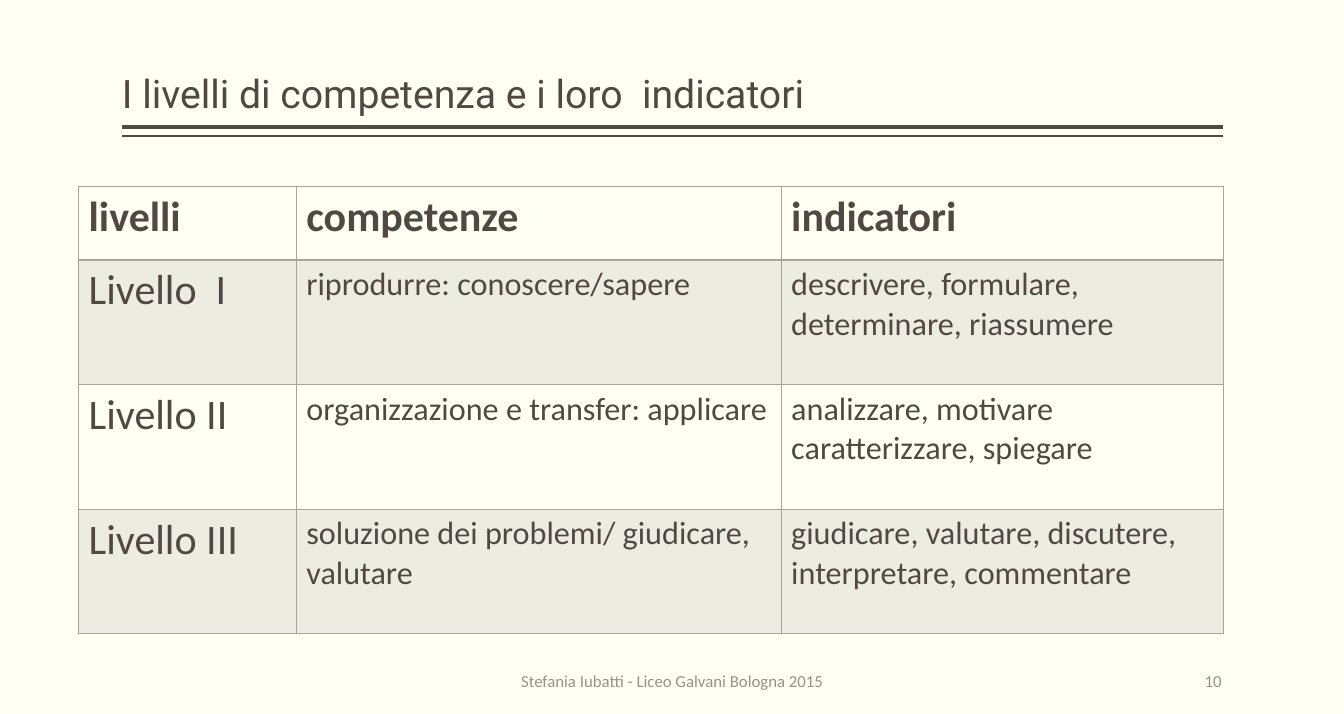
from dataclasses import dataclass
from lxml import etree
from pptx import Presentation
from pptx.dml.color import RGBColor
from pptx.enum.shapes import MSO_CONNECTOR
from pptx.enum.text import MSO_ANCHOR, PP_ALIGN
from pptx.oxml.ns import qn
from pptx.util import Inches, Pt

STRAIGHT = MSO_CONNECTOR.STRAIGHT
BOTTOM, MIDDLE = MSO_ANCHOR.BOTTOM, MSO_ANCHOR.MIDDLE
LEFT, CENTER, RIGHT = PP_ALIGN.LEFT, PP_ALIGN.CENTER, PP_ALIGN.RIGHT

CREAM = RGBColor(0xFF, 0xFF, 0xF3)
BROWN = RGBColor(0x51, 0x48, 0x43)
TAUPE = RGBColor(0x9D, 0x8F, 0x88)
GREY = RGBColor(0xA8, 0xA3, 0x9E)
BAND_ALPHA = "20000"

PAGE_WIDTH = 40 / 3
PAGE_HEIGHT = 18 / 2.54


@dataclass
class Label:
    text: str
    left: float
    top: float
    width: float
    height: float
    size: int
    font: str
    color: RGBColor
    anchor: MSO_ANCHOR
    align: PP_ALIGN
    line_spacing: float = 1.0


@dataclass
class Rule:
    top: float
    weight: float


LABELS = [
    Label("I livelli di competenza e i loro  indicatori", 1.21, 0.48, 10.92, 0.73,
          28, "Roboto", BROWN, BOTTOM, LEFT, 0.9),
    Label("10", 10.12, 6.57, 2, 0.38, 12, "Calibri", TAUPE, MIDDLE, RIGHT),
    Label("Stefania Iubatti - Liceo Galvani Bologna 2015", 3.21, 6.57, 6.92, 0.38,
          12, "Calibri", TAUPE, MIDDLE, CENTER),
]
RULES = [Rule(1.26, 3), Rule(1.35, 1)]
RULE_LEFT, RULE_RIGHT = 1.21, 12.13

COLUMN_WIDTHS = [2.16, 4.81, 4.39]
ROW_HEIGHTS = [0.73] + [3.71 / 3] * 3
LEVELS = [
    ("livelli", "competenze", "indicatori"),
    ("Livello  I", "riprodurre: conoscere/sapere",
     "descrivere, formulare, determinare, riassumere"),
    ("Livello II", "organizzazione e transfer: applicare",
     "analizzare, motivare caratterizzare, spiegare"),
    ("Livello III", "soluzione dei problemi/ giudicare, valutare",
     "giudicare, valutare, discutere, interpretare, commentare"),
]


def set_all(target, values: dict) -> None:
    for name, value in values.items():
        setattr(target, name, value)


def add_span(para, text: str, color: RGBColor, **font_values) -> None:
    span = para.add_run()
    span.text = text
    set_all(span.font, font_values)
    span.font.color.rgb = color


def add_label(page, label: Label) -> None:
    box = page.shapes.add_textbox(Inches(label.left), Inches(label.top),
                                  Inches(label.width), Inches(label.height))
    frame = box.text_frame
    set_all(frame, {"word_wrap": True, "vertical_anchor": label.anchor,
                    "margin_left": 0, "margin_right": 0,
                    "margin_top": Inches(0.05), "margin_bottom": Inches(0.05)})
    para = frame.paragraphs[0]
    set_all(para, {"alignment": label.align, "line_spacing": label.line_spacing})
    add_span(para, label.text, label.color, size=Pt(label.size), name=label.font)


def add_rule(page, rule: Rule) -> None:
    line = page.shapes.add_connector(STRAIGHT, Inches(RULE_RIGHT), Inches(rule.top),
                                     Inches(RULE_LEFT), Inches(rule.top))
    line.line.width = Pt(rule.weight)
    line.line.color.rgb = BROWN
    etree.SubElement(line._element.spPr, qn("a:effectLst"))


def add_borders(cell, weights: dict[str, float]) -> None:
    properties = cell._tc.get_or_add_tcPr()
    for position, (side, weight) in enumerate(weights.items()):
        border = etree.Element(qn(f"a:ln{side}"), w=str(Pt(weight)))
        fill = etree.SubElement(border, qn("a:solidFill"))
        etree.SubElement(fill, qn("a:srgbClr"), val=str(GREY))
        properties.insert(position, border)


def fill_band(cell) -> None:
    cell.fill.solid()
    cell.fill.fore_color.rgb = GREY
    color = cell._tc.tcPr.find(f"{qn('a:solidFill')}/{qn('a:srgbClr')}")
    etree.SubElement(color, qn("a:alpha"), val=BAND_ALPHA)


def add_levels_table(page) -> None:
    table = page.shapes.add_table(
        len(LEVELS), len(COLUMN_WIDTHS), Inches(0.78), Inches(1.85),
        Inches(sum(COLUMN_WIDTHS)), Inches(sum(ROW_HEIGHTS))).table
    set_all(table, {"first_row": False, "horz_banding": False})
    for column, width in zip(table.columns, COLUMN_WIDTHS):
        column.width = Inches(width)
    for row, height in zip(table.rows, ROW_HEIGHTS):
        row.height = Inches(height)
    for row_index, texts in enumerate(LEVELS):
        header = row_index == 0
        for column_index, text in enumerate(texts):
            cell = table.cell(row_index, column_index)
            size = 30 if header or column_index == 0 else 23
            add_span(cell.text_frame.paragraphs[0], text, BROWN,
                     size=Pt(size), name="Calibri", bold=header)
            if row_index % 2:
                fill_band(cell)
            else:
                cell.fill.background()
            add_borders(cell, {"L": 1, "R": 1, "T": 2 if row_index == 1 else 1,
                               "B": 2 if header else 1})


def main() -> None:
    deck = Presentation()
    deck.slide_width = Inches(PAGE_WIDTH)
    deck.slide_height = Inches(PAGE_HEIGHT)
    page = deck.slides.add_slide(deck.slide_layouts[6])
    page.background.fill.solid()
    page.background.fill.fore_color.rgb = CREAM
    for rule in RULES:
        add_rule(page, rule)
    add_levels_table(page)
    for label in LABELS:
        add_label(page, label)
    deck.save("out.pptx")


if __name__ == "__main__":
    main()
